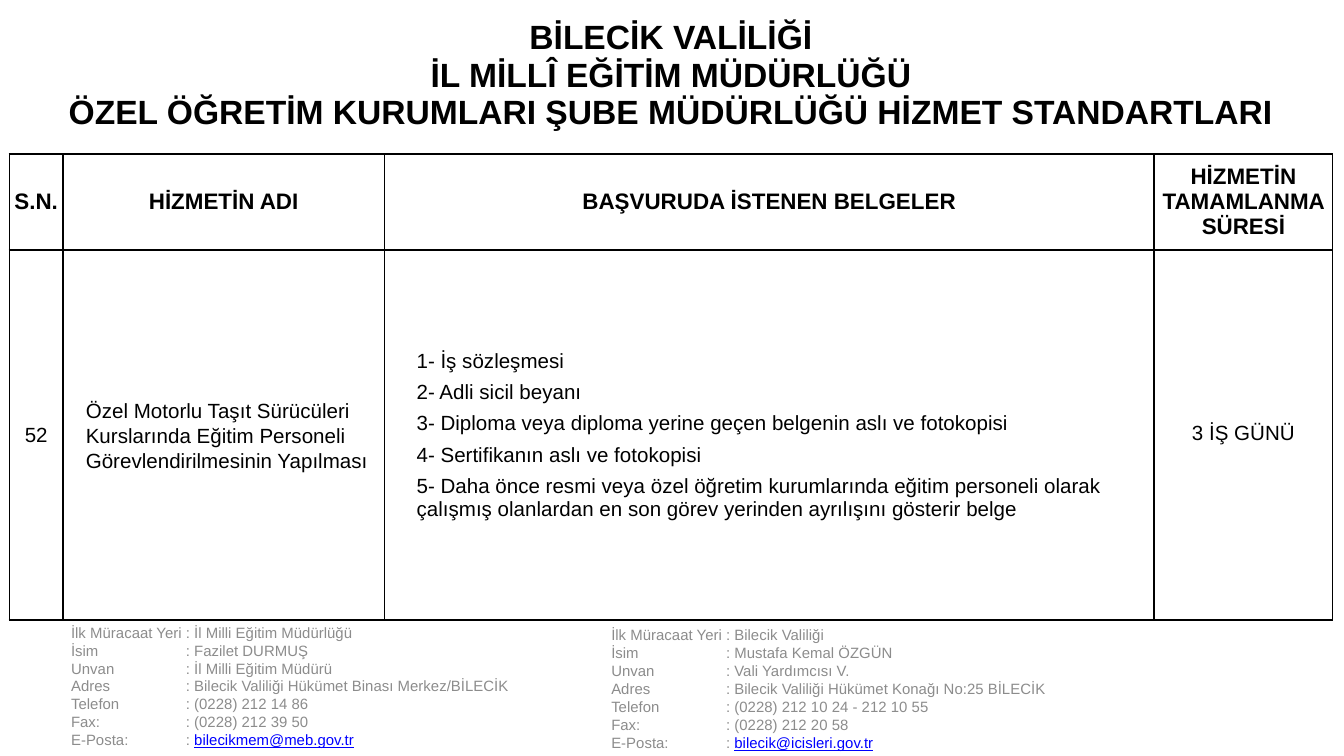
from lxml.etree import SubElement
from pptx import Presentation
from pptx.dml.color import RGBColor as Color
from pptx.enum.text import MSO_ANCHOR as Anchor, PP_ALIGN as Align
from pptx.oxml.ns import qn
from pptx.util import Pt

THEME = {
    "font": "Arial", "title": 18, "header": 12, "body": 11, "contact": 8,
    "ink": "000000", "muted": "8C8C8C", "link": "0000FF",
}

# Content
TITLE = [
    "BİLECİK VALİLİĞİ",
    "İL MİLLÎ EĞİTİM MÜDÜRLÜĞÜ",
    "ÖZEL ÖĞRETİM KURUMLARI ŞUBE MÜDÜRLÜĞÜ HİZMET STANDARTLARI",
]
HEADERS = ["S.N.", "HİZMETİN ADI", "BAŞVURUDA İSTENEN BELGELER",
           "HİZMETİN TAMAMLANMA SÜRESİ"]
NUMBER = "52"
SERVICE = ("Özel Motorlu Taşıt Sürücüleri Kurslarında Eğitim Personeli "
           "Görevlendirilmesinin Yapılması")
DOCUMENTS = [
    "1- İş sözleşmesi",
    "2- Adli sicil beyanı",
    "3- Diploma veya diploma yerine geçen belgenin aslı ve fotokopisi",
    "4- Sertifikanın aslı ve fotokopisi",
    "5- Daha önce resmi veya özel öğretim kurumlarında eğitim personeli olarak "
    "çalışmış olanlardan en son görev yerinden ayrılışını gösterir belge",
]
DURATION = "3 İŞ GÜNÜ"
LABELS = ["İlk Müracaat Yeri", "İsim", "Unvan", "Adres", "Telefon", "Fax:", "E-Posta:"]
CONTACTS = [
    (31, 332.6, ["İl Milli Eğitim Müdürlüğü", "Fazilet DURMUŞ", "İl Milli Eğitim Müdürü",
                 "Bilecik Valiliği Hükümet Binası Merkez/BİLECİK",
                 "(0228) 212 14 86", "(0228) 212 39 50", "bilecikmem@meb.gov.tr"]),
    (320.4, 334, ["Bilecik Valiliği", "Mustafa Kemal ÖZGÜN", "Vali Yardımcısı V.",
                  "Bilecik Valiliği Hükümet Konağı No:25 BİLECİK",
                  "(0228) 212 10 24 - 212 10 55", "(0228) 212 20 58",
                  "bilecik@icisleri.gov.tr"]),
]

# Layout
PAGE = (720, 405)
TABLE_AT = (5, -1.5)
COLUMNS = [28.8, 172.2, 412.4, 95.6]
ROWS = [84, 51.4, 198.4]
CONTACT_SIZE = (340, 72)
COLON_TAB = 61.5


def set_format(target, values):
    for name, value in values.items():
        setattr(target, name, value)


def add_span(para, text, size, color="ink", **values):
    span = para.add_run()
    span.text = text
    set_format(span.font, {"name": THEME["font"], "size": Pt(THEME[size]), **values})
    span.font.color.rgb = Color.from_string(THEME[color])


def paragraphs(frame, count):
    return [frame.paragraphs[0]] + [frame.add_paragraph() for _ in range(count - 1)]


def set_borders(cell, shown):
    properties = cell._tc.get_or_add_tcPr()
    for edge in "LRTB":
        line = SubElement(properties, qn(f"a:ln{edge}"), w=str(Pt(1)))
        if edge in shown:
            fill = SubElement(line, qn("a:solidFill"))
            SubElement(fill, qn("a:srgbClr"), val=THEME["ink"])
        else:
            SubElement(line, qn("a:noFill"))


def fill_cell(cell, lines, size, align=Align.CENTER, margin=0, indent=0,
              bold=False, spacing=None, gap=0):
    set_format(cell, {"vertical_anchor": Anchor.MIDDLE,
                      "margin_left": Pt(margin), "margin_right": Pt(margin),
                      "margin_top": Pt(margin / 2), "margin_bottom": Pt(margin / 2)})
    for index, (para, text) in enumerate(zip(paragraphs(cell.text_frame, len(lines)), lines)):
        if indent:
            para._p.get_or_add_pPr().set("marL", str(Pt(indent)))
        set_format(para, {"alignment": align, "line_spacing": spacing})
        if index and gap:
            para.space_before = Pt(gap)
        add_span(para, text, size, bold=bold)


def add_contact(page, left, top, values):
    box = page.shapes.add_textbox(Pt(left), Pt(top), *map(Pt, CONTACT_SIZE))
    frame = box.text_frame
    set_format(frame, {"word_wrap": True, "vertical_anchor": Anchor.BOTTOM})
    for para, label, value in zip(paragraphs(frame, len(LABELS)), LABELS, values):
        tabs = SubElement(para._p.get_or_add_pPr(), qn("a:tabLst"))
        SubElement(tabs, qn("a:tab"), pos=str(Pt(COLON_TAB)), algn="l")
        add_span(para, f"{label}\t: ", "contact", "muted")
        if "@" in value:
            add_span(para, value, "contact", "link", underline=True)
        else:
            add_span(para, value, "contact", "muted")


def add_service_table(page):
    frame = page.shapes.add_table(len(ROWS), len(COLUMNS), *map(Pt, TABLE_AT),
                                  Pt(sum(COLUMNS)), Pt(sum(ROWS)))
    table = frame.table
    set_format(table, {"first_row": False, "horz_banding": False})
    for column, width in zip(table.columns, COLUMNS):
        column.width = Pt(width)
    for index, (row, height) in enumerate(zip(table.rows, ROWS)):
        row.height = Pt(height)
        for cell in row.cells:
            set_borders(cell, "LRTB" if index else "B")
            cell.fill.background()

    # Title row and column headers
    table.cell(0, 0).merge(table.cell(0, len(COLUMNS) - 1))
    fill_cell(table.cell(0, 0), TITLE, "title", bold=True)
    for index, header in enumerate(HEADERS):
        fill_cell(table.cell(1, index), [header], "header", bold=True)

    # Service row
    number, service, documents, duration = table.rows[2].cells
    fill_cell(number, [NUMBER], "body")
    fill_cell(service, [SERVICE], "body", Align.LEFT, margin=7.2, indent=5, spacing=1.1)
    fill_cell(documents, DOCUMENTS, "body", Align.LEFT, margin=7.2, indent=10, gap=4.5)
    fill_cell(duration, [DURATION], "body", margin=7.2, spacing=Pt(10))


def main():
    deck = Presentation()
    deck.slide_width, deck.slide_height = map(Pt, PAGE)
    page = deck.slides.add_slide(deck.slide_layouts[6])
    for left, top, values in CONTACTS:
        add_contact(page, left, top, values)
    add_service_table(page)
    deck.save("out.pptx")


if __name__ == "__main__":
    main()
